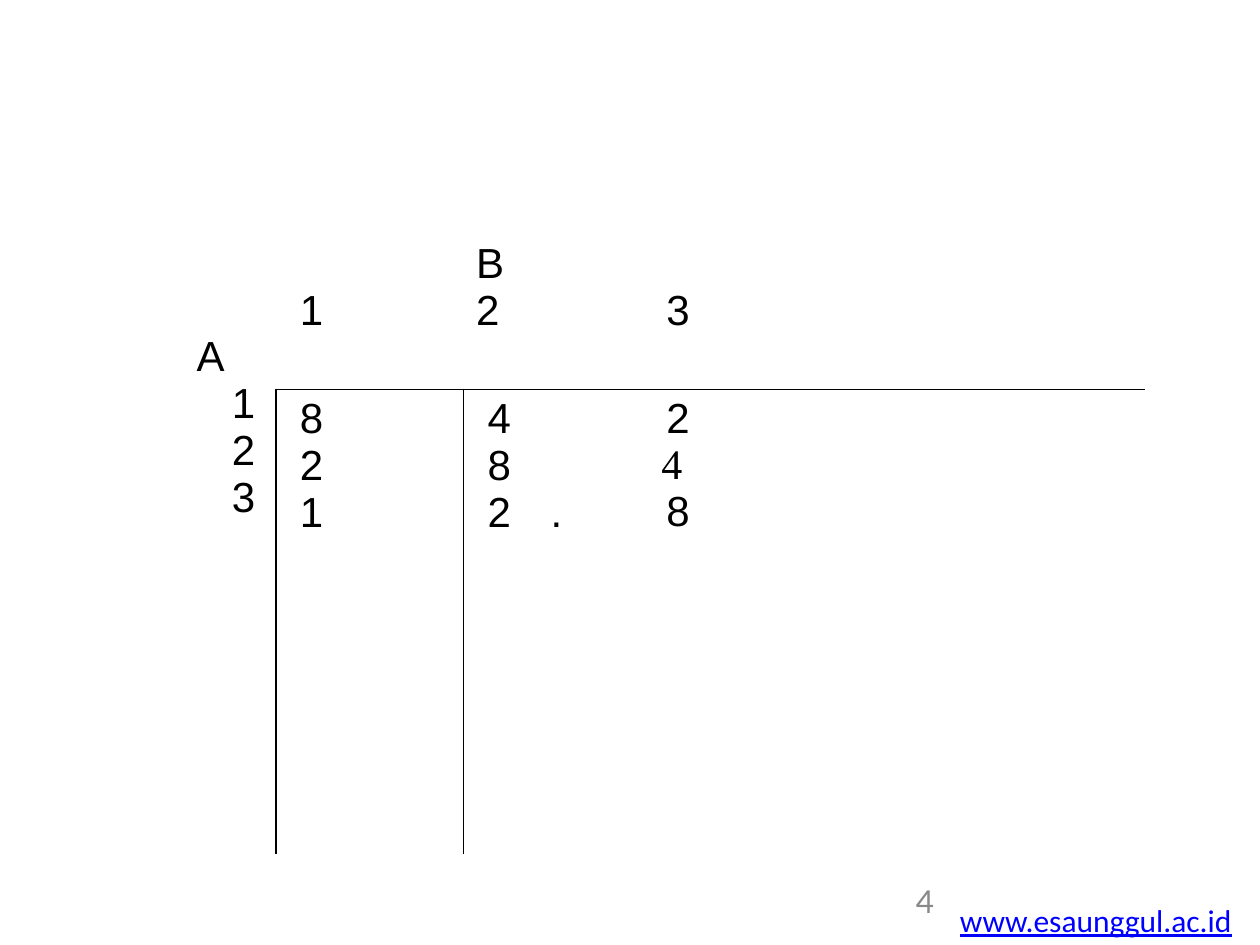
from dataclasses import dataclass
from lxml.etree import SubElement
from pptx import Presentation
from pptx.dml.color import RGBColor
from pptx.oxml.ns import qn
from pptx.util import Inches, Pt


@dataclass
class Theme:
    ink: str = "000000"
    link: str = "0000FF"
    muted: str = "898989"
    table_size: int = 24
    footer_size: int = 18


theme = Theme()
NO_GRID_STYLE = "{2D5ABB26-0587-4C30-8999-92F81FD0307C}"


def write(paragraph, text, size, color, font="Arial", underline=None, indent=0, tab=None):
    properties = paragraph._p.get_or_add_pPr()
    properties.set("marL", str(Inches(indent)))
    properties.set("indent", "0")
    if tab:
        stops = SubElement(properties, qn("a:tabLst"))
        SubElement(stops, qn("a:tab"), pos=str(Inches(tab)), algn="l")
    run = paragraph.add_run()
    run.text = text
    run.font.name = font
    run.font.size = Pt(size)
    run.font.color.rgb = RGBColor.from_string(color)
    run.font.underline = underline


def add_border(cell, side):
    line = SubElement(cell._tc.get_or_add_tcPr(), qn(f"a:{side}"), w=str(Pt(1)))
    fill = SubElement(line, qn("a:solidFill"))
    SubElement(fill, qn("a:srgbClr"), val=theme.ink)


prs = Presentation()
prs.slide_width, prs.slide_height = Inches(10), Inches(7.5)
slide = prs.slides.add_slide(prs.slide_layouts[6])

# Footer: web address and page number
footers = [
    ("www.esaunggul.ac.id", 7.52, 7.1, 2.38, False,
     dict(color=theme.link, font="Calibri", underline=True)),
    ("4", 7.17, 6.95, 2.33, True, dict(color=theme.muted, font="Lato")),
]
for text, left, top, width, wrap, style in footers:
    frame = slide.shapes.add_textbox(
        Inches(left), Inches(top), Inches(width), Inches(0.4)).text_frame
    frame.word_wrap = wrap
    write(frame.paragraphs[0], text, theme.footer_size, **style)

# Payoff matrix
matrix = slide.shapes.add_table(
    2, 4, Inches(1.46), Inches(1.86), Inches(7.63), Inches(4.92)).table
matrix.first_row = matrix.horz_banding = False
matrix._tbl.tblPr.find(qn("a:tableStyleId")).text = NO_GRID_STYLE
for column, width in zip(matrix.columns, (0.73, 1.49, 1.14, 4.27)):
    column.width = Inches(width)
for row, height in zip(matrix.rows, (1.23, 3.69)):
    row.height = Inches(height)
matrix.cell(0, 0).merge(matrix.cell(1, 0))

# Borders set off the payoffs from the strategy labels
for column in (1, 2, 3):
    if column == 1:
        add_border(matrix.cell(1, column), "lnL")
    add_border(matrix.cell(1, column), "lnT")
    add_border(matrix.cell(0, column), "lnB")

# Cell position: left margin, lines of offset from the top, text with formats
LINE = 0.37
step, nudge = dict(indent=0.28), dict(indent=0.04)
contents = {
    (0, 0): (0.1, 2, [("A", {}), ("1", step), ("2", step), ("3", step)]),
    (0, 1): (0.19, 1, [("1", {})]),
    (0, 2): (0.1, 0, [("B", {}), ("2", {})]),
    (0, 3): (0.47, 1, [("3", {})]),
    (1, 1): (0.19, 0, [("8", {}), ("2", {}), ("1", {})]),
    (1, 2): (0.19, 0, [("4", {}), ("8", {}), ("2\t.", dict(tab=0.56))]),
    (1, 3): (0.43, 0, [("2", nudge), ("4", dict(font="Times New Roman")), ("8", nudge)]),
}
for (row, column), (margin, offset, lines) in contents.items():
    cell = matrix.cell(row, column)
    cell.fill.background()
    cell.margin_left = Inches(margin)
    cell.margin_top = Inches(0.05 + offset * LINE)
    frame = cell.text_frame
    for number, (text, style) in enumerate(lines):
        paragraph = frame.add_paragraph() if number else frame.paragraphs[0]
        write(paragraph, text, theme.table_size, theme.ink, **style)

prs.save("out.pptx")
